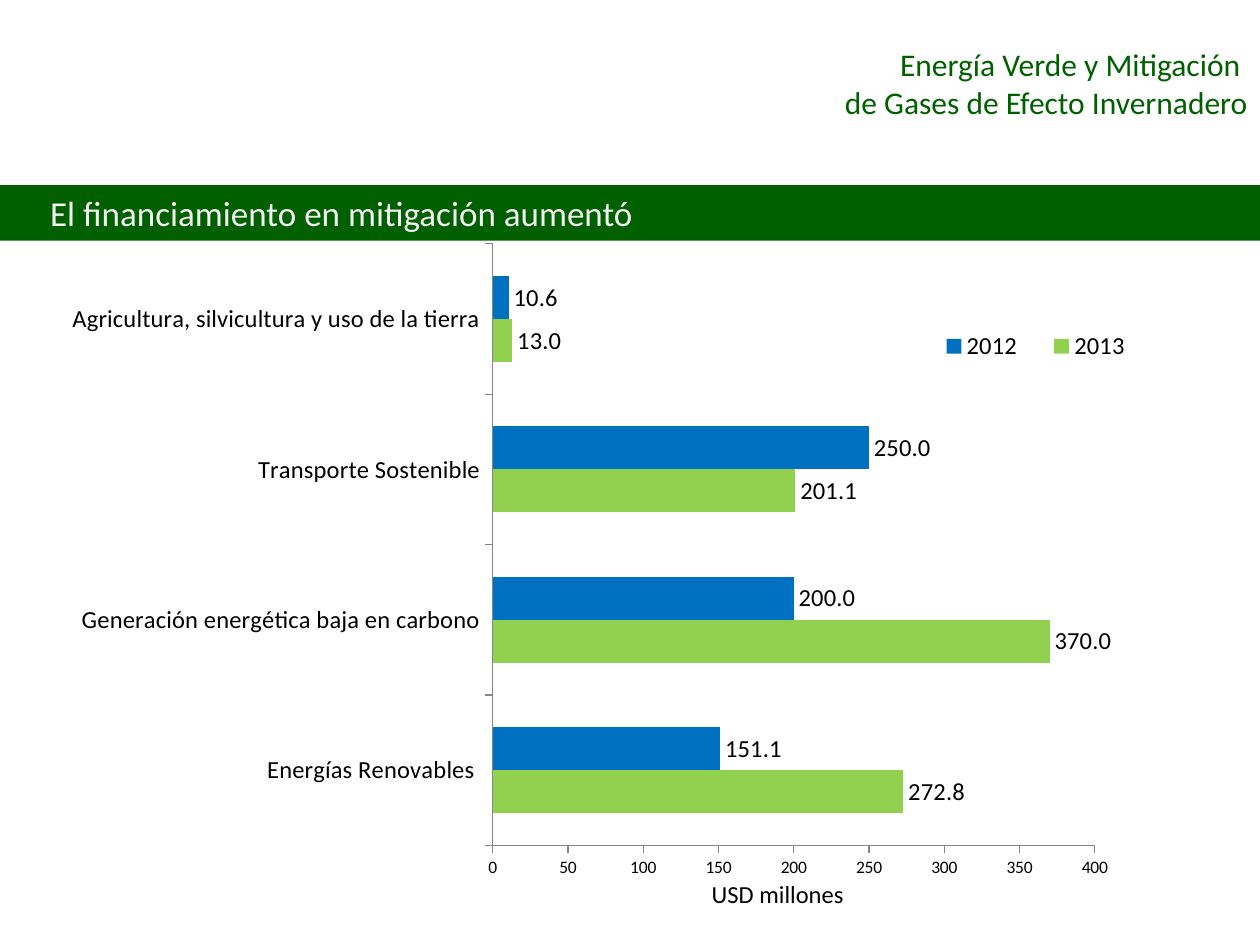
from lxml import etree
from pptx import Presentation
from pptx.chart.data import CategoryChartData
from pptx.dml.color import RGBColor
from pptx.enum.chart import XL_CHART_TYPE as ChartType
from pptx.enum.chart import XL_LABEL_POSITION as LabelPosition
from pptx.enum.chart import XL_LEGEND_POSITION as LegendPosition
from pptx.enum.chart import XL_TICK_MARK as TickMark
from pptx.enum.shapes import MSO_SHAPE as ShapeType
from pptx.enum.text import MSO_ANCHOR as Anchor
from pptx.enum.text import PP_ALIGN as Align
from pptx.oxml.ns import qn
from pptx.util import Inches, Pt

FONT = "Calibri"
GREEN = RGBColor(0x00, 0x60, 0x00)
OFF_WHITE = RGBColor(0xF2, 0xF2, 0xF2)
BLACK = RGBColor(0, 0, 0)
AXIS_GRAY = RGBColor(0x86, 0x86, 0x86)

CATEGORIES = [
    "Energías Renovables ",
    "Generación energética baja en carbono",
    "Transporte Sostenible",
    "Agricultura, silvicultura y uso de la tierra",
]
SERIES = [
    ("2013", (272.8, 370, 201.1, 13), RGBColor(0x92, 0xD0, 0x50)),
    ("2012", (151.1, 200, 250, 10.6), RGBColor(0x00, 0x70, 0xC0)),
]


def set_font(font, size, color):
    font.name = FONT
    font.size = Pt(size)
    font.color.rgb = color


def write_lines(frame, lines, size, color, align=Align.LEFT, margin=0, indent=0):
    """Fill a text frame with one paragraph for each line."""
    frame.word_wrap = True
    for index, line in enumerate(lines):
        paragraph = frame.paragraphs[0] if index == 0 else frame.add_paragraph()
        paragraph.alignment = align
        properties = paragraph._p.get_or_add_pPr()
        properties.set("marL", str(Inches(margin)))
        properties.set("indent", str(Inches(indent)))
        run = paragraph.add_run()
        run.text = line
        set_font(run.font, size, color)


def add_band(slide, text):
    band = slide.shapes.add_shape(
        ShapeType.RECTANGLE, Inches(0), Inches(1.47), Inches(10), Inches(0.44))
    band.shadow.inherit = False
    band.fill.solid()
    band.fill.fore_color.rgb = GREEN
    band.line.fill.background()
    band.text_frame.vertical_anchor = Anchor.MIDDLE
    write_lines(band.text_frame, [text], 20, OFF_WHITE, margin=0.3)


def add_text(slide, left, top, width, height, *args, **options):
    box = slide.shapes.add_textbox(
        Inches(left), Inches(top), Inches(width), Inches(height))
    write_lines(box.text_frame, *args, **options)


def set_layout(parent, followers, x, y, width, height, inner=False):
    """Place a chart part by fractions of the chart area."""
    for old in parent.findall(qn("c:layout")):
        parent.remove(old)
    layout = etree.Element(qn("c:layout"))
    manual = etree.SubElement(layout, qn("c:manualLayout"))
    values = [("layoutTarget", "inner")] if inner else []
    values += [("xMode", "edge"), ("yMode", "edge"),
               ("x", x), ("y", y), ("w", width), ("h", height)]
    for name, value in values:
        etree.SubElement(manual, qn(f"c:{name}")).set("val", str(value))
    following = next(child for child in parent
                     if child.tag in [qn(tag) for tag in followers])
    following.addprevious(layout)


def style_axis(axis, size):
    axis.has_major_gridlines = False
    axis.major_tick_mark = TickMark.OUTSIDE
    axis.minor_tick_mark = TickMark.NONE
    axis.format.line.color.rgb = AXIS_GRAY
    axis.format.line.width = Pt(0.75)
    set_font(axis.tick_labels.font, size, BLACK)


def style_series(series, color):
    series.format.fill.solid()
    series.format.fill.fore_color.rgb = color
    series.invert_if_negative = False
    labels = series.data_labels
    labels.show_value = True
    labels.number_format = "#,##0.0"
    labels.number_format_is_linked = False
    labels.position = LabelPosition.OUTSIDE_END
    set_font(labels.font, 14, BLACK)


def add_finance_chart(slide):
    data = CategoryChartData()
    data.categories = CATEGORIES
    for name, values, _ in SERIES:
        data.add_series(name, values)
    chart = slide.shapes.add_chart(
        ChartType.BAR_CLUSTERED, Inches(0.35), Inches(1.83),
        Inches(9.37), Inches(5.25), data).chart
    set_font(chart.font, 10, BLACK)
    chart.has_title = False

    plot = chart.plots[0]
    plot.gap_width = 150
    plot.vary_by_categories = False
    for series, (_, _, color) in zip(plot.series, SERIES):
        style_series(series, color)

    style_axis(chart.category_axis, 14)
    style_axis(chart.value_axis, 10)
    chart.value_axis.minimum_scale = 0
    chart.value_axis.maximum_scale = 400
    chart.value_axis.major_unit = 50
    chart.value_axis.tick_labels.number_format = "0"
    chart.value_axis.tick_labels.number_format_is_linked = False

    chart.has_legend = True
    legend = chart.legend
    legend.position = LegendPosition.RIGHT
    legend.include_in_layout = False
    set_font(legend.font, 14, BLACK)
    set_layout(legend._element, ["c:overlay"], 0.74, 0.13, 0.2, 0.09)
    plot_area = chart._chartSpace.chart.plotArea
    set_layout(plot_area, ["c:barChart"], 0.38, 0.02, 0.51, 0.91, inner=True)


def main():
    presentation = Presentation()
    presentation.slide_width = Inches(10)
    presentation.slide_height = Inches(7.5)
    slide = presentation.slides.add_slide(presentation.slide_layouts[6])
    add_band(slide, "El financiamiento en mitigación aumentó")
    add_text(slide, 1.69, 0.31, 8.31, 1.04,
             ["Energía Verde y Mitigación ", "de Gases de Efecto Invernadero"],
             18, GREEN, align=Align.RIGHT, margin=0.56, indent=-0.56)
    add_text(slide, 5.55, 6.93, 1.47, 0.34, ["USD millones"], 14, BLACK)
    add_finance_chart(slide)
    presentation.save("out.pptx")


if __name__ == "__main__":
    main()
